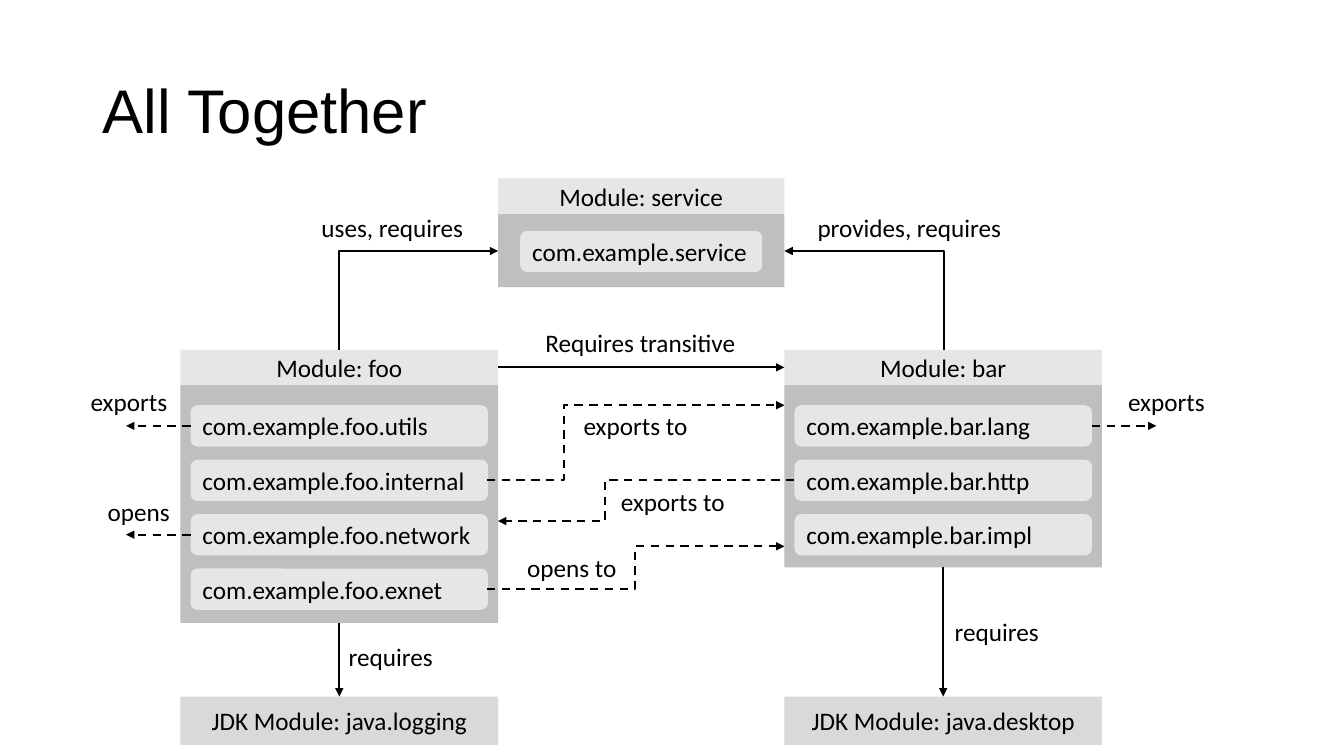
from pptx import Presentation
from pptx.dml.color import RGBColor
from pptx.enum.dml import MSO_LINE
from pptx.enum.shapes import MSO_CONNECTOR as LINK, MSO_SHAPE as SHAPE
from pptx.enum.text import MSO_ANCHOR as ANCHOR, PP_ALIGN as ALIGN
from pptx.oxml.ns import qn
from pptx.util import Emu, Pt
from lxml.etree import SubElement

PX = 9144  # 100 px to the inch
BLACK, LIGHT, PALE, GREY = "000000", "E7E6E6", "D9D9D9", "BFBFBF"
TOP, LEFT, BOTTOM, RIGHT = range(4)
HEADER_HEIGHT, PACKAGE_HEIGHT, PACKAGE_STEP = 35, 41, 54


def px(*lengths):
    return [Emu(round(length * PX)) for length in lengths]


def color(hex_code):
    return RGBColor.from_string(hex_code)


def write(box, text, align=ALIGN.LEFT, size=18, font="Calibri"):
    para = box.text_frame.paragraphs[0]
    para.text = text
    para.alignment = align
    para.font.size = Pt(size)
    para.font.name = font
    para.font.color.rgb = color(BLACK)
    return para


def add_box(page, kind, at, fill, text="", align=ALIGN.CENTER):
    box = page.shapes.add_shape(kind, *px(*at))
    box.shadow.inherit = False
    box.fill.solid()
    box.fill.fore_color.rgb = color(fill)
    box.line.fill.background()
    if text:
        box.text_frame.vertical_anchor = ANCHOR.MIDDLE
        write(box, text, align)
    return box


def add_title(page, text):
    box = page.shapes.add_textbox(*px(92, 40, 1150, 145))
    box.text_frame.word_wrap = True
    box.text_frame.vertical_anchor = ANCHOR.MIDDLE
    write(box, text, size=44, font="Arial").line_spacing = 0.9


def add_label(page, text, x, y, width):
    box = page.shapes.add_textbox(*px(x, y, width, 40))
    box.text_frame.word_wrap = False
    write(box, text)


def add_module(page, at, name, packages, margin=10, gap=20):
    """Draw a titled module with its packages; return header, body and packages."""
    x, y, width, height = at
    body_top = y + HEADER_HEIGHT
    body = add_box(page, SHAPE.RECTANGLE,
                   (x, body_top, width, height - HEADER_HEIGHT), GREY)
    header = add_box(page, SHAPE.RECTANGLE, (x, y, width, HEADER_HEIGHT),
                     LIGHT, f"Module: {name}")
    pills = [
        add_box(page, SHAPE.ROUNDED_RECTANGLE,
                (x + margin, body_top + gap + row * PACKAGE_STEP,
                 width - 2 * margin, PACKAGE_HEIGHT),
                LIGHT, f"com.example.{package}", ALIGN.LEFT)
        for row, package in enumerate(packages)
    ]
    return header, body, pills


def add_arrow(page, start, end, kind=LINK.STRAIGHT, dashed=False):
    arrow = page.shapes.add_connector(kind, *px(*start, *end))
    arrow.line.color.rgb = color(BLACK)
    arrow.line.width = Pt(1.5)
    if dashed:
        arrow.line.dash_style = MSO_LINE.DASH
    SubElement(arrow.line._get_or_add_ln(), qn("a:tailEnd"), type="triangle")
    SubElement(arrow._element.spPr, qn("a:effectLst"))
    return arrow


def join(page, source, source_side, target, target_side):
    arrow = add_arrow(page, (0, 0), (0, 0))
    arrow.begin_connect(source, source_side)
    arrow.end_connect(target, target_side)


def add_outward_arrow(page, package, side):
    """Dashed arrow of 64 px leaving a package sideways."""
    y = (package.top + package.height // 2) / PX
    if side == LEFT:
        x = package.left / PX
        tip = x - 64
    else:
        x = (package.left + package.width) / PX
        tip = x + 64
    add_arrow(page, (x, y), (tip, y), dashed=True).begin_connect(package, side)


def add_step_arrow(page, start, end, bend_x):
    """Dashed arrow that turns vertical at bend_x."""
    arrow = add_arrow(page, start, end, LINK.ELBOW, dashed=True)
    share = (bend_x - start[0]) / (end[0] - start[0])
    guides = arrow._element.spPr.prstGeom.get_or_add_avLst()
    SubElement(guides, qn("a:gd"), name="adj1", fmla=f"val {round(share * 100000)}")


def add_corner_arrow(page, start, end):
    """Arrow that rises from start, then runs sideways to end."""
    middle_x, middle_y = (start[0] + end[0]) / 2, (start[1] + end[1]) / 2
    rise, run = (start[1] - end[1]) / 2, (end[0] - start[0]) / 2
    side = 1 if run > 0 else -1
    # The shape is laid out lying down, then turned by a quarter.
    arrow = add_arrow(page,
                      (middle_x + side * rise, middle_y + abs(run)),
                      (middle_x - side * rise, middle_y - abs(run)), LINK.ELBOW)
    geometry = arrow._element.spPr
    geometry.prstGeom.set("prst", "bentConnector2")
    geometry.find(qn("a:xfrm")).set("rot", str((90 if side > 0 else 270) * 60000))


def main():
    deck = Presentation()
    deck.slide_width, deck.slide_height = px(1333, 750)
    page = deck.slides.add_slide(deck.slide_layouts[6])
    add_title(page, "All Together")

    foo_header, foo_body, foo_packages = add_module(
        page, (179, 347, 315, 271), "foo",
        ["foo.utils", "foo.internal", "foo.network", "foo.exnet"])
    bar_header, bar_body, bar_packages = add_module(
        page, (778, 347, 315, 216), "bar", ["bar.lang", "bar.http", "bar.impl"])
    add_module(page, (494, 177, 284, 108), "service", ["service"], margin=22, gap=17)

    for body, library in ((foo_body, "java.logging"), (bar_body, "java.desktop")):
        jdk = add_box(page, SHAPE.RECTANGLE, (body.left / PX, 691, 315, 48),
                      PALE, f"JDK Module: {library}")
        join(page, body, BOTTOM, jdk, TOP)
    join(page, foo_header, RIGHT, bar_header, LEFT)

    add_outward_arrow(page, foo_packages[0], LEFT)
    add_outward_arrow(page, foo_packages[2], LEFT)
    add_outward_arrow(page, bar_packages[0], RIGHT)

    add_step_arrow(page, (483, 476), (778, 402), 559)
    add_step_arrow(page, (788, 476), (494, 517), 600)
    add_step_arrow(page, (483, 584), (778, 542), 630)
    add_corner_arrow(page, (336, 347), (494, 249))
    add_corner_arrow(page, (936, 347), (778, 249))

    for label in (
        ("uses, requires", 309, 206, 162),
        ("provides, requires", 801, 206, 205),
        ("Requires transitive", 531, 320, 211),
        ("exports", 80, 378, 97),
        ("opens", 97, 487, 83),
        ("exports", 1109, 378, 97),
        ("exports to", 569, 402, 124),
        ("exports to", 606, 478, 124),
        ("opens to", 513, 543, 110),
        ("requires", 336, 631, 105),
        ("requires", 937, 607, 105),
    ):
        add_label(page, *label)

    deck.save("out.pptx")


if __name__ == "__main__":
    main()
